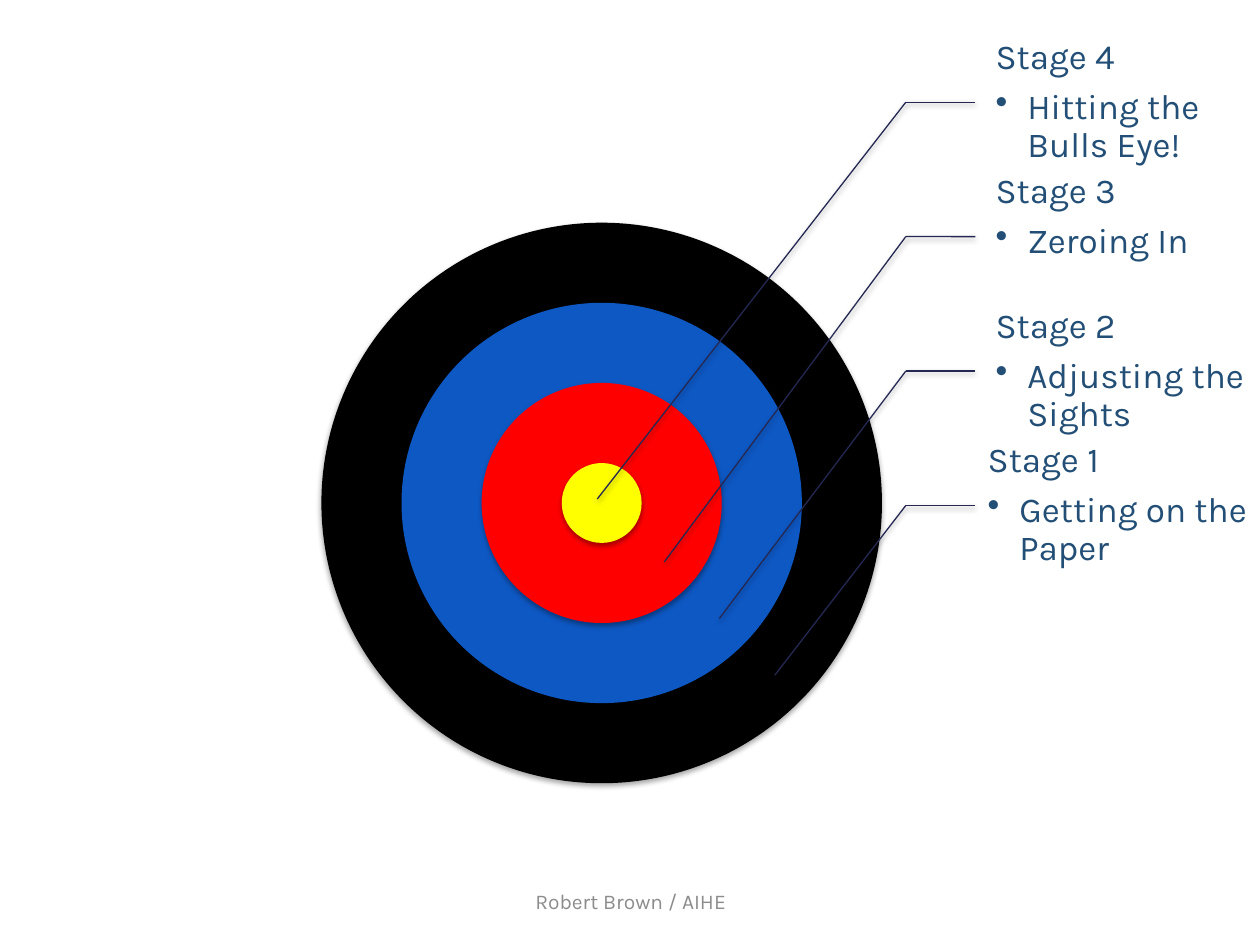
from dataclasses import dataclass

import pptx
import pptx.dml.color
import pptx.enum.shapes
import pptx.enum.text
import pptx.oxml
import pptx.oxml.ns
import pptx.util

Cm = pptx.util.Cm
Pt = pptx.util.Pt
Kind = pptx.enum.shapes.MSO_SHAPE
Link = pptx.enum.shapes.MSO_CONNECTOR
Align = pptx.enum.text.PP_ALIGN
Anchor = pptx.enum.text.MSO_ANCHOR


@dataclass(frozen=True)
class Theme:
    font: str = "Karla"
    body: float = 20
    foot: float = 12
    ink: str = "234F77"
    grey: str = "8C8C8C"
    line: str = "242852"
    rings: tuple[str, ...] = ("000000", "0E58C4", "FF0000", "FFFF00")


@dataclass(frozen=True)
class Stage:
    head: str
    goal: str
    tip: tuple[float, float]
    inset: float = 0.41


THEME = Theme()
STAGES = (
    Stage("Stage 4", "Hitting the Bulls Eye!", (12.04, 10.06)),
    Stage("Stage 3", "Zeroing In", (13.39, 11.33)),
    Stage("Stage 2", "Adjusting the Sights", (14.5, 12.47)),
    Stage("Stage 1", "Getting on the Paper", (15.62, 13.61), 0.25),
)
MID_X, MID_Y = 12.13, 10.14
RING, RING_STEP = 11.3, 3.23
TOP, STEP = 0.71, 2.71
LEFT, WIDTH, HIGH = 19.66, 5.66, 2.7
BEND = 18.26


def tint(code: str) -> pptx.dml.color.RGBColor:
    return pptx.dml.color.RGBColor.from_string(code)


def add_shade(shape, alpha: int, gap: float) -> None:
    space = pptx.oxml.ns.nsdecls("a")
    shape._element.spPr.append(pptx.oxml.parse_xml(
        f'<a:effectLst {space}><a:outerShdw blurRad="{Pt(3.1)}" dist="{Pt(gap)}" '
        f'dir="5400000" rotWithShape="0"><a:srgbClr val="000000">'
        f'<a:alpha val="{alpha * 1000}"/></a:srgbClr></a:outerShdw></a:effectLst>'))


def add_ring(slide, size: float, code: str) -> None:
    ring = slide.shapes.add_shape(
        Kind.OVAL, Cm(MID_X - size / 2), Cm(MID_Y - size / 2), Cm(size), Cm(size))
    ring.fill.solid()
    ring.fill.fore_color.rgb = tint(code)
    ring.line.fill.background()
    add_shade(ring, 35, 1.8)


def add_text(para, text: str, size: float, code: str) -> None:
    run = para.add_run()
    run.text = text
    run.font.name = THEME.font
    run.font.size = Pt(size)
    run.font.color.rgb = tint(code)


def add_dot(para) -> None:
    props = para._p.get_or_add_pPr()
    props.set("marL", str(Cm(0.64)))
    props.set("indent", str(Cm(-0.64)))
    space = pptx.oxml.ns.nsdecls("a")
    props.append(pptx.oxml.parse_xml(f'<a:buChar {space} char="•"/>'))


def add_line(slide, start: tuple[float, float], end: tuple[float, float]):
    line = slide.shapes.add_connector(
        Link.STRAIGHT, *(Cm(place) for place in start + end))
    line.line.color.rgb = tint(THEME.line)
    line.line.width = Pt(0.75)
    add_shade(line, 38, 1.6)
    return line


def add_stage(slide, stage: Stage, top: float) -> None:
    box = slide.shapes.add_textbox(Cm(LEFT), Cm(top), Cm(WIDTH), Cm(HIGH))
    frame = box.text_frame
    frame.word_wrap = True
    frame.margin_left = Cm(stage.inset)
    frame.margin_top = frame.margin_right = frame.margin_bottom = Cm(0.08)
    head, goal = frame.paragraphs[0], frame.add_paragraph()
    for para, text, after in ((head, stage.head, 7), (goal, stage.goal, 3)):
        para.line_spacing = 0.9
        para.space_after = Pt(after)
        add_text(para, text, THEME.body, THEME.ink)
    goal.level = 1
    add_dot(goal)

    mid = top + HIGH / 2
    arm = add_line(slide, (BEND, mid), (LEFT, mid))
    arm.end_connect(box, 1)
    add_line(slide, (BEND, mid), stage.tip)


def add_foot(slide, text: str) -> None:
    box = slide.shapes.add_textbox(Cm(8.69), Cm(17.65), Cm(8.05), Cm(1.02))
    frame = box.text_frame
    frame.word_wrap = True
    frame.vertical_anchor = Anchor.MIDDLE
    para = frame.paragraphs[0]
    para.alignment = Align.CENTER
    add_text(para, text, THEME.foot, THEME.grey)


def main() -> None:
    deck = pptx.Presentation()
    deck.slide_width, deck.slide_height = Cm(25.4), Cm(19.05)
    slide = deck.slides.add_slide(deck.slide_layouts[6])
    for rank, code in enumerate(THEME.rings):
        add_ring(slide, RING - RING_STEP * rank, code)
    for rank, stage in enumerate(STAGES):
        add_stage(slide, stage, TOP + STEP * rank)
    add_foot(slide, "Robert Brown / AIHE")
    deck.save("out.pptx")


if __name__ == "__main__":
    main()
